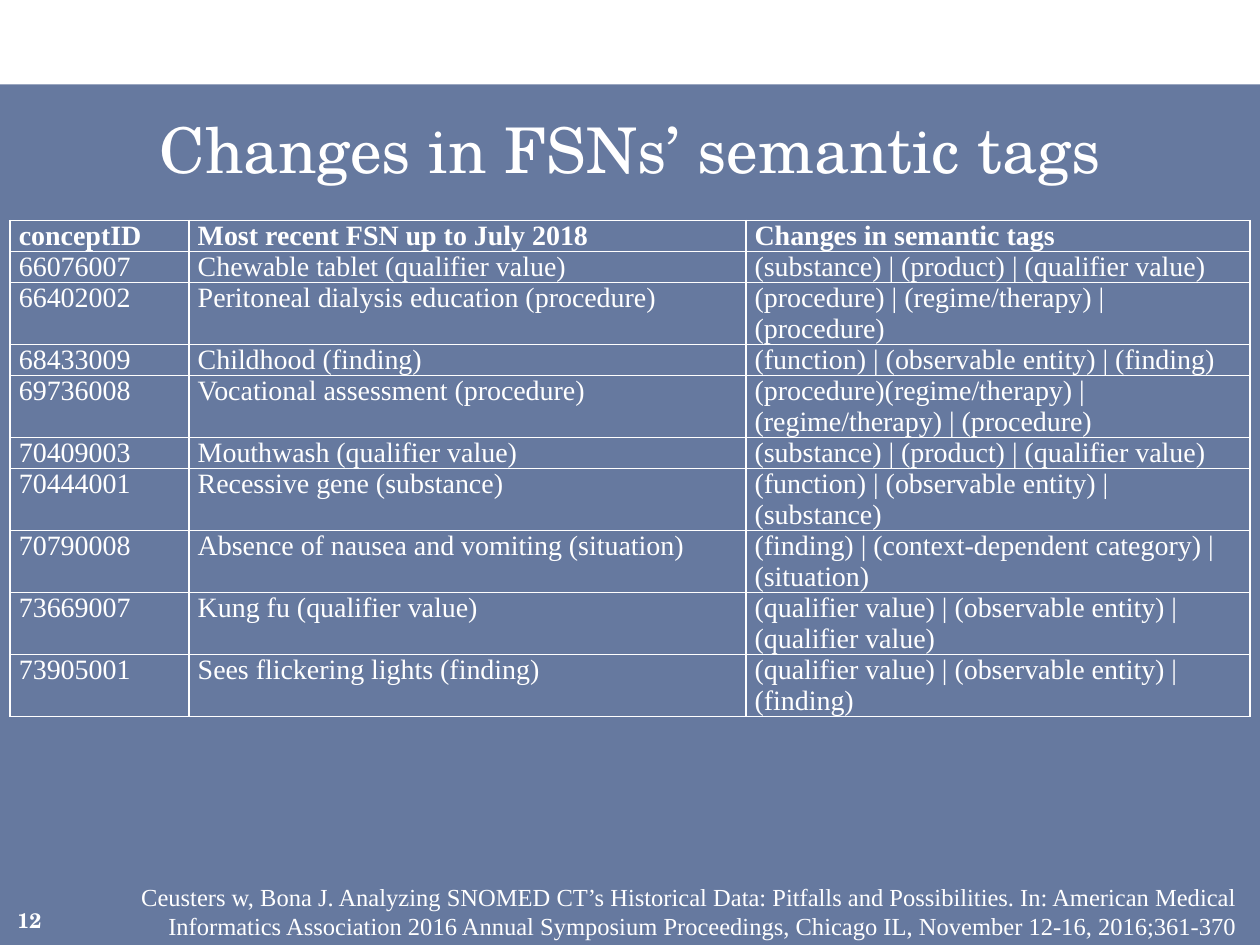
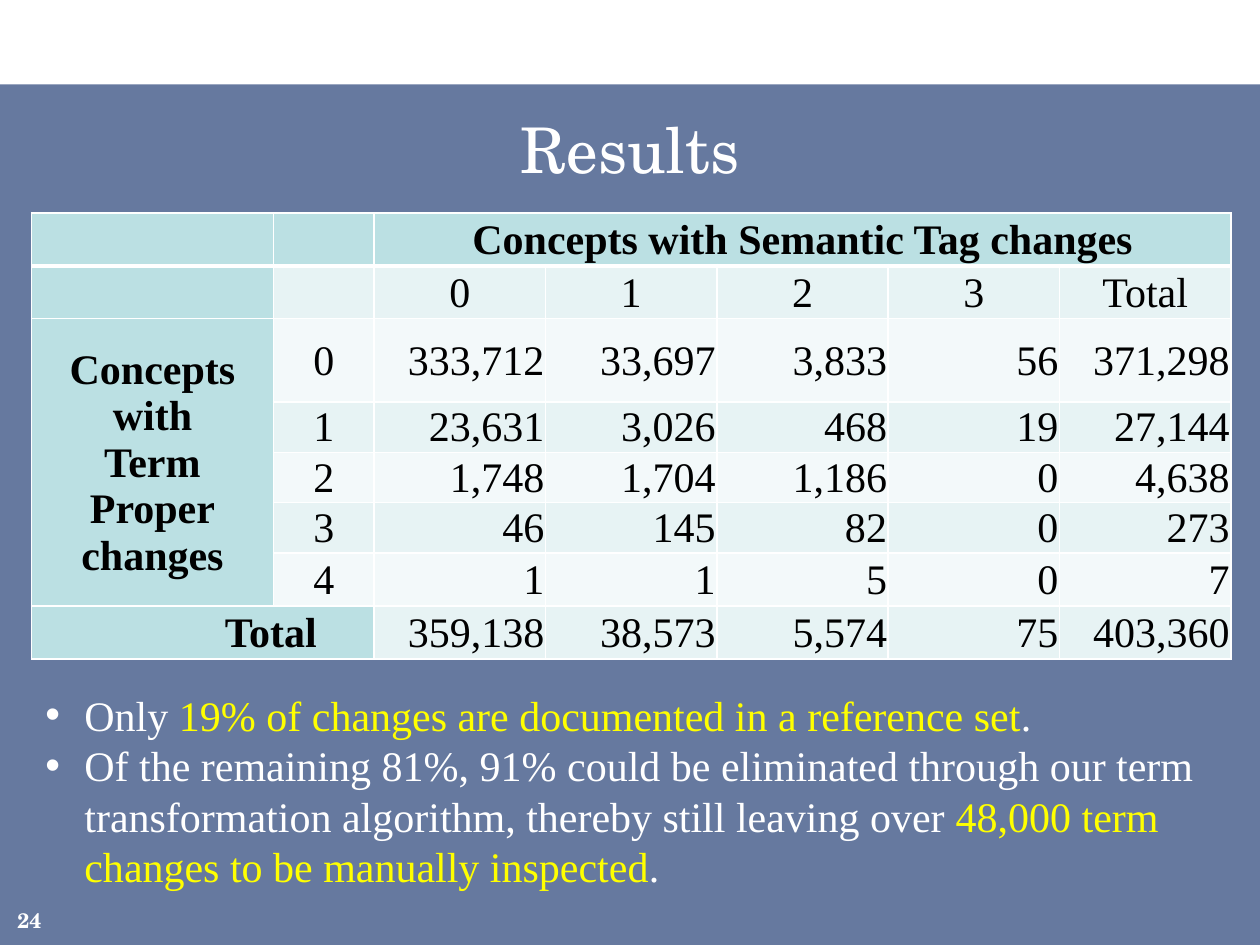
"""Build two slides on changes in terminology concepts: a tag table and a results table."""
from dataclasses import dataclass
from typing import NamedTuple

from lxml import etree
from pptx import Presentation
from pptx.dml.color import RGBColor
from pptx.enum.shapes import MSO_SHAPE
from pptx.enum.text import MSO_ANCHOR, MSO_AUTO_SIZE, PP_ALIGN
from pptx.oxml.ns import qn
from pptx.util import Inches, Pt

LEFT, CENTER, RIGHT = PP_ALIGN.LEFT, PP_ALIGN.CENTER, PP_ALIGN.RIGHT
TOP, MIDDLE, BOTTOM = MSO_ANCHOR.TOP, MSO_ANCHOR.MIDDLE, MSO_ANCHOR.BOTTOM
NO_AUTOFIT = MSO_AUTO_SIZE.NONE
RECTANGLE = MSO_SHAPE.RECTANGLE

DISPLAY_FONT, TEXT_FONT = "TeX Gyre Schola", "Times New Roman"
WHITE, BLACK, YELLOW, NAVY = "FFFFFF", "000000", "FFFF00", "002060"
HEADER_TEAL, BAND_DARK, BAND_LIGHT = "BBE0E3", "E7F3F4", "F3F9FA"
TITLE_ONLY, TITLE_AND_BODY = 5, 1
MARGINS = ("margin_left", "margin_top", "margin_right", "margin_bottom")


class Box(NamedTuple):
    """Left, top, width and height in inches."""

    left: float
    top: float
    width: float
    height: float


class Span(NamedTuple):
    """A stretch of text in one colour."""

    text: str
    color: str = WHITE


@dataclass(frozen=True)
class TextStyle:
    """Font and paragraph format; line height in points, indent in inches."""

    size: float
    font: str = TEXT_FONT
    bold: bool = False
    align: PP_ALIGN = LEFT
    line_height: float | None = None
    indent: float = 0
    bulleted: bool = False


@dataclass(frozen=True)
class CellStyle:
    """Look of one table cell; margins run left, top, right, bottom."""

    text: TextStyle
    color: str
    fill: str | None
    margins: tuple[float, ...]
    anchor: MSO_ANCHOR = MIDDLE
    top_line: float = 1
    bottom_line: float = 1


TITLE = TextStyle(36, DISPLAY_FONT, align=CENTER)
PAGE_NUMBER = TextStyle(12, DISPLAY_FONT, bold=True, align=RIGHT)
CITATION = TextStyle(14, align=RIGHT)
FINDING = TextStyle(24, indent=0.31, bulleted=True)

TITLE_BOX = Box(0.25, 0.83, 9.5, 0.83)
NUMBER_BOX = Box(0, 7.08, 0.33, 0.32)
BAND_BOX = Box(0, 0.67, 10, 6.83)

TAG_COLUMNS = (1.42, 4.42, 4)
TAG_ROW_HEIGHT = 0.24
TAG_CHANGES = (
    ("conceptID", "Most recent FSN up to July 2018", "Changes in semantic tags"),
    ("66076007", "Chewable tablet (qualifier value)",
     "(substance) | (product) | (qualifier value)"),
    ("66402002", "Peritoneal dialysis education (procedure)",
     "(procedure) | (regime/therapy) | (procedure)"),
    ("68433009", "Childhood (finding)",
     "(function) | (observable entity) | (finding)"),
    ("69736008", "Vocational assessment (procedure)",
     "(procedure)(regime/therapy) | (regime/therapy) | (procedure)"),
    ("70409003", "Mouthwash (qualifier value)",
     "(substance) | (product) | (qualifier value)"),
    ("70444001", "Recessive gene (substance)",
     "(function) | (observable entity) | (substance)"),
    ("70790008", "Absence of nausea and vomiting (situation)",
     "(finding) | (context-dependent category) | (situation)"),
    ("73669007", "Kung fu (qualifier value)",
     "(qualifier value) | (observable entity) | (qualifier value)"),
    ("73905001", "Sees flickering lights (finding)",
     "(qualifier value) | (observable entity) | (finding)"),
)
SOURCE = (
    "Ceusters w, Bona J. Analyzing SNOMED CT’s Historical Data: Pitfalls and "
    "Possibilities. In: American Medical Informatics Association 2016 Annual "
    "Symposium Proceedings, Chicago IL, November 12-16, 2016;361-370"
)

COUNT_COLUMNS = (1.92, 0.8) + (1.36,) * 5
COUNT_ROWS = (0.42, 0.42, 0.66, 0.4, 0.4, 0.4, 0.42, 0.42)
COUNTS = (
    ("", "", "Concepts with Semantic Tag changes", "", "", "", ""),
    ("", "", "0", "1", "2", "3", "Total"),
    ("Concepts\nwith\nTerm\nProper\nchanges", "0",
     "333,712", "33,697", "3,833", "56", "371,298"),
    ("", "1", "23,631", "3,026", "468", "19", "27,144"),
    ("", "2", "1,748", "1,704", "1,186", "0", "4,638"),
    ("", "3", "46", "145", "82", "0", "273"),
    ("", "4", "1", "1", "5", "0", "7"),
    ("Total", "", "359,138", "38,573", "5,574", "75", "403,360"),
)
COUNT_MERGES = (((0, 2), (0, 6)), ((2, 0), (6, 0)), ((7, 0), (7, 1)))
FINDINGS = (
    (Span("Only "), Span("19% of changes are documented in a reference set", YELLOW),
     Span(".")),
    (Span("Of the remaining 81%, 91% could be eliminated through our term "
          "transformation algorithm, thereby still leaving over "),
     Span("48,000 term changes to be manually inspected", YELLOW), Span(".")),
)


def rgb(color: str) -> RGBColor:
    """Turn a hex string into a colour."""
    return RGBColor.from_string(color)


def apply(target, values: dict) -> None:
    """Set each named attribute on the target."""
    for name, value in values.items():
        setattr(target, name, value)


def inches(box: Box) -> list:
    """Give the box as lengths."""
    return [Inches(length) for length in box]


def place(shape, box: Box) -> None:
    """Move and size a shape."""
    apply(shape, dict(zip(("left", "top", "width", "height"), inches(box))))


def indent_paragraph(paragraph, style: TextStyle) -> None:
    """Indent the paragraph, with a hanging round bullet if the style has one."""
    properties = paragraph._p.get_or_add_pPr()
    properties.set("marL", str(Inches(style.indent)))
    if style.bulleted:
        properties.set("indent", str(-Inches(style.indent)))
        etree.SubElement(properties, qn("a:buChar")).set("char", "•")


def write(frame, paragraphs, style: TextStyle) -> None:
    """Fill a text frame with paragraphs made of spans."""
    for index, spans in enumerate(paragraphs):
        paragraph = frame.add_paragraph() if index else frame.paragraphs[0]
        if style.indent:
            indent_paragraph(paragraph, style)
        line_spacing = Pt(style.line_height) if style.line_height else 1.0
        apply(paragraph, {"alignment": style.align, "line_spacing": line_spacing,
                          "space_before": Pt(0), "space_after": Pt(0)})
        for span in spans:
            run = paragraph.add_run()
            run.text = span.text
            apply(run.font, {"name": style.font, "size": Pt(style.size),
                             "bold": style.bold})
            run.font.color.rgb = rgb(span.color)


def add_text(slide, box: Box, text: str, style: TextStyle,
             anchor: MSO_ANCHOR = TOP, margins: tuple = (0.1, 0.05, 0.1, 0.05)) -> None:
    """Add a wrapped white text box."""
    frame = slide.shapes.add_textbox(*inches(box)).text_frame
    apply(frame, {"word_wrap": True, "vertical_anchor": anchor})
    apply(frame, dict(zip(MARGINS, map(Inches, margins))))
    write(frame, [[Span(text)]], style)


def add_band(prs) -> None:
    """Put the translucent navy band on the master, behind everything."""
    band = prs.slides[0].shapes.add_shape(RECTANGLE, *inches(BAND_BOX))
    band.shadow.inherit = False
    band.line.fill.background()
    band.fill.solid()
    band.fill.fore_color.rgb = rgb(NAVY)
    navy = band._element.spPr.find(f"{qn('a:solidFill')}/{qn('a:srgbClr')}")
    etree.SubElement(navy, qn("a:alpha")).set("val", "60000")
    prs.slide_master.shapes._spTree.insert(2, band._element)


def add_slide(prs, layout: int, title: str, number: str):
    """Add a slide with its title and page number."""
    slide = prs.slides.add_slide(prs.slide_layouts[layout])
    heading = slide.shapes.title
    place(heading, TITLE_BOX)
    apply(heading.text_frame, {"vertical_anchor": TOP, "auto_size": NO_AUTOFIT})
    write(heading.text_frame, [[Span(title)]], TITLE)
    add_text(slide, NUMBER_BOX, number, PAGE_NUMBER, BOTTOM, (0, 0, 0, 0))
    return slide


def draw_borders(cell, top: float, bottom: float) -> None:
    """Draw white lines around a cell."""
    properties = cell._tc.get_or_add_tcPr()
    for side, points in {"L": 1, "R": 1, "T": top, "B": bottom}.items():
        line = etree.SubElement(properties, qn(f"a:ln{side}"), w=str(Pt(points)))
        solid = etree.SubElement(line, qn("a:solidFill"))
        etree.SubElement(solid, qn("a:srgbClr")).set("val", WHITE)


def fill_cell(cell, text: str, style: CellStyle) -> None:
    """Write and format one cell."""
    draw_borders(cell, style.top_line, style.bottom_line)
    if style.fill:
        cell.fill.solid()
        cell.fill.fore_color.rgb = rgb(style.fill)
    else:
        cell.fill.background()
    cell.vertical_anchor = style.anchor
    apply(cell, dict(zip(MARGINS, map(Inches, style.margins))))
    if text:
        lines = [[Span(line, style.color)] for line in text.split("\n")]
        write(cell.text_frame, lines, style.text)


def add_grid(slide, left: float, top: float, columns, heights, rows, style_of,
             merges=()) -> None:
    """Add a table whose cell styles come from style_of(row, column)."""
    box = Box(left, top, sum(columns), sum(heights))
    table = slide.shapes.add_table(len(rows), len(columns), *inches(box)).table
    apply(table, {"first_row": False, "horz_banding": False})
    for column, width in zip(table.columns, columns):
        column.width = Inches(width)
    for row, height in zip(table.rows, heights):
        row.height = Inches(height)
    for start, end in merges:
        table.cell(*start).merge(table.cell(*end))
    for r, texts in enumerate(rows):
        for c, text in enumerate(texts):
            fill_cell(table.cell(r, c), text, style_of(r, c))


def tag_style(row: int, column: int) -> CellStyle:
    """Style the tag table: open cells under a bold heading row."""
    return CellStyle(TextStyle(16, bold=row == 0, line_height=17.7), WHITE, None,
                     (0.07, 0, 0.07, 0), TOP)


def count_style(row: int, column: int) -> CellStyle:
    """Style the counts: teal headings, banded rows and right-aligned numbers."""
    heading = row == 0 or column == 0 or (row, column) == (7, 1)
    band = BAND_DARK if row % 2 else BAND_LIGHT
    align = RIGHT if row > 1 and column > 1 else CENTER
    indent = 1.08 if (row, column) == (7, 0) else 0
    return CellStyle(
        TextStyle(24, bold=heading, align=align, line_height=26.6, indent=indent),
        BLACK, HEADER_TEAL if heading else band, (0.01, 0.01, 0.01, 0),
        top_line=3 if row == 1 else 1, bottom_line=3 if row == 0 else 1)


def build_tag_slide(prs) -> None:
    """Build the slide on semantic tag changes."""
    slide = add_slide(prs, TITLE_ONLY, "Changes in FSNs’ semantic tags", "12")
    heights = (TAG_ROW_HEIGHT,) * len(TAG_CHANGES)
    add_grid(slide, 0.08, 1.75, TAG_COLUMNS, heights, TAG_CHANGES, tag_style)
    add_text(slide, Box(1, 6.95, 8.92, 0.57), SOURCE, CITATION)


def build_results_slide(prs) -> None:
    """Build the slide with counts and findings."""
    slide = add_slide(prs, TITLE_AND_BODY, "Results", "24")
    add_grid(slide, 0.25, 1.69, COUNT_COLUMNS, COUNT_ROWS, COUNTS, count_style,
             COUNT_MERGES)
    body = slide.placeholders[1]
    place(body, Box(0.26, 5.42, 9.5, 1.72))
    apply(body.text_frame, {"auto_size": NO_AUTOFIT, "vertical_anchor": TOP})
    write(body.text_frame, FINDINGS, FINDING)


def main() -> None:
    """Build and save the slides."""
    prs = Presentation()
    apply(prs, {"slide_width": Inches(10), "slide_height": Inches(7.5)})
    build_tag_slide(prs)
    build_results_slide(prs)
    add_band(prs)
    prs.save("out.pptx")


if __name__ == "__main__":
    main()
